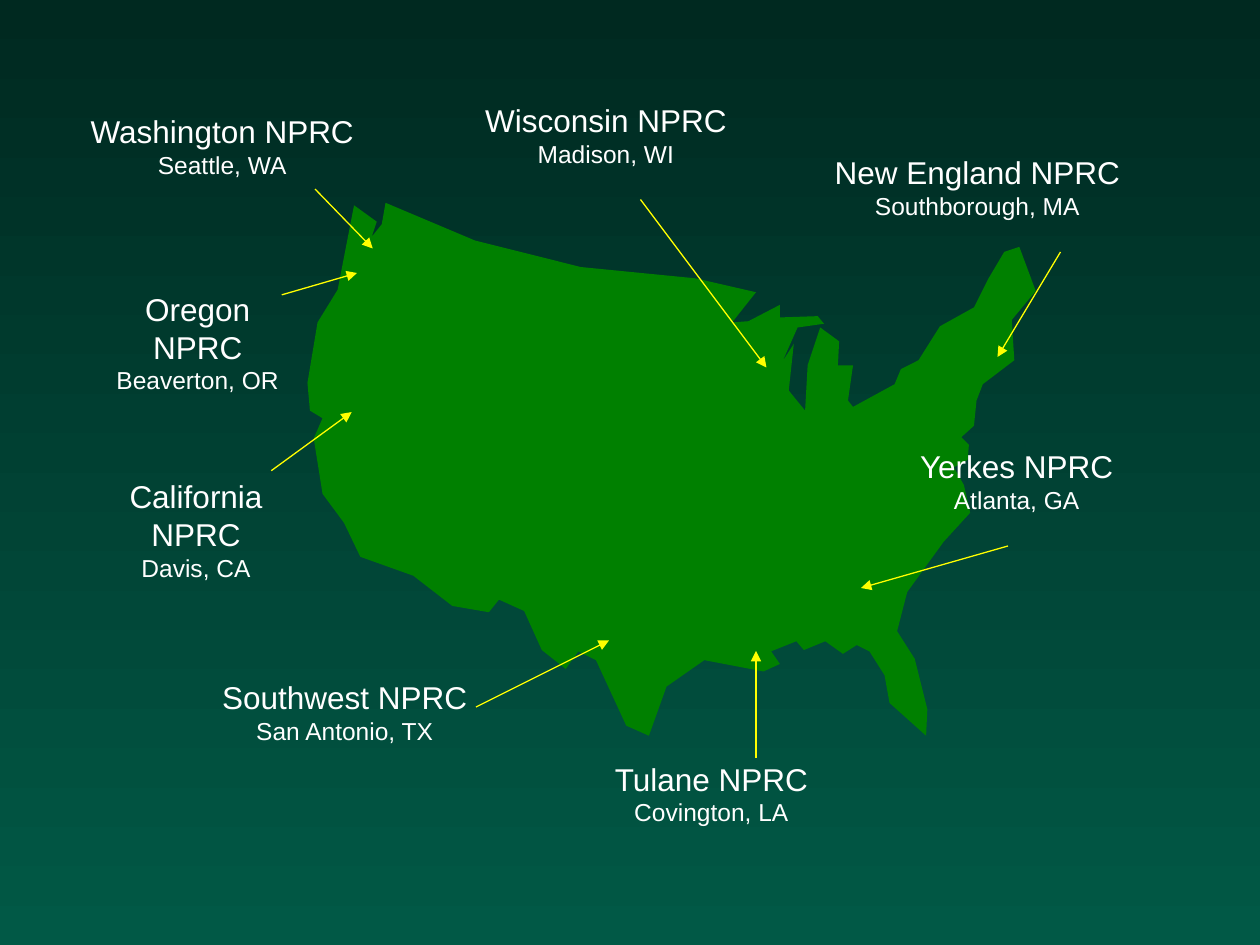
from dataclasses import dataclass

from pptx import Presentation
from pptx.dml.color import RGBColor
from pptx.enum.shapes import MSO_CONNECTOR
from pptx.enum.text import MSO_ANCHOR, MSO_AUTO_SIZE, PP_ALIGN
from pptx.oxml import parse_xml
from pptx.oxml.ns import nsdecls, qn
from pptx.util import Pt

STRAIGHT = MSO_CONNECTOR.STRAIGHT
CENTER = PP_ALIGN.CENTER
TOP = MSO_ANCHOR.TOP
GROW = MSO_AUTO_SIZE.SHAPE_TO_FIT_TEXT


@dataclass(frozen=True)
class Theme:
    font: str = "Arial"
    name_size: float = 18
    place_size: float = 14
    arrow_width: float = 0.75
    text: RGBColor = RGBColor.from_string("FFFFFF")
    arrow: RGBColor = RGBColor.from_string("FFFF00")
    land: RGBColor = RGBColor.from_string("008000")
    background_top: RGBColor = RGBColor.from_string("002920")
    background_bottom: RGBColor = RGBColor.from_string("015946")


THEME = Theme()
LABEL_HEIGHT = 60

# Name, place, label (left, top, width), arrow start, arrow end, in points
CENTERS = [
    ("Oregon NPRC", "Beaverton, OR", (48, 162, 130), (161, 168.5), (204, 156)),
    ("California NPRC", "Davis, CA", (39, 269, 146), (155, 269), (201, 235.5)),
    ("Southwest NPRC", "San Antonio, TX", (119.5, 384, 155), (272, 404), (348, 366)),
    ("Washington NPRC", "Seattle, WA", (42, 60.5, 170), (180, 108), (213, 142)),
    ("Tulane NPRC", "Covington, LA", (344, 430.5, 125), (432, 433), (432, 372)),
    ("Yerkes NPRC", "Atlanta, GA", (517.5, 252, 127), (576, 312), (492, 336)),
    ("New England NPRC", "Southborough, MA", (469.5, 84, 178), (606, 144), (570, 204)),
    ("Wisconsin NPRC", "Madison, WI", (270, 54, 152.5), (366, 114), (438, 210)),
]

MAP_UNIT = Pt(0.72)
# Outline of the country, clockwise from the north-west, in map units
COUNTRY = [
    (306, 161), (377, 191), (461, 212), (552, 221), (600, 232), (581, 256),
    (594, 255), (619, 242), (619, 252), (649, 251), (654, 257), (633, 260),
    (621, 287), (630, 273), (626, 310), (639, 326), (641, 290), (651, 260),
    (666, 271), (665, 290), (677, 290), (673, 318), (677, 323), (710, 305),
    (715, 293), (729, 286), (746, 259), (773, 244), (784, 222), (797, 200),
    (809, 196), (822, 231), (803, 254), (805, 286), (780, 305), (775, 318),
    (773, 338), (763, 347), (769, 353), (768, 365), (757, 371), (765, 385),
    (770, 407), (749, 430), (720, 470), (712, 501), (726, 523), (736, 563),
    (735, 584), (706, 558), (702, 536), (690, 517), (680, 512), (669, 519),
    (655, 509), (638, 516), (632, 509), (612, 517), (619, 527), (606, 533),
    (559, 524), (529, 545), (515, 584), (497, 576), (473, 524), (459, 517),
    (449, 531), (430, 516), (416, 485), (396, 476), (388, 486), (359, 481),
    (328, 457), (286, 442), (273, 415), (256, 392), (249, 348), (256, 332),
    (246, 326), (244, 304), (252, 256), (268, 230), (281, 163), (299, 176),
    (295, 188), (303, 178),
]


def set_background(slide):
    fill = slide.background.fill
    fill.gradient()
    fill.gradient_angle = 270
    colors = (THEME.background_top, THEME.background_bottom)
    for stop, color in zip(fill.gradient_stops, colors):
        stop.color.rgb = color


def add_country(slide):
    builder = slide.shapes.build_freeform(*COUNTRY[0], scale=MAP_UNIT)
    builder.add_line_segments(COUNTRY[1:], close=True)
    shape = builder.convert_to_shape()
    shape.fill.solid()
    shape.fill.fore_color.rgb = THEME.land
    shape.line.fill.background()
    shape.shadow.inherit = False


def write(paragraph, text, *, size, color=THEME.text, align=CENTER):
    paragraph.alignment = align
    run = paragraph.add_run()
    run.text = text
    run.font.name = THEME.font
    run.font.size = Pt(size)
    run.font.color.rgb = color


def add_label(slide, name, place, box):
    frame = slide.shapes.add_textbox(*map(Pt, box), Pt(LABEL_HEIGHT)).text_frame
    frame.word_wrap = False
    frame.auto_size = GROW
    frame.vertical_anchor = TOP
    write(frame.paragraphs[0], name, size=THEME.name_size)
    write(frame.add_paragraph(), place, size=THEME.place_size)


def add_arrow(slide, start, end):
    connector = slide.shapes.add_connector(STRAIGHT, *map(Pt, start + end))
    connector.line.color.rgb = THEME.arrow
    connector.line.width = Pt(THEME.arrow_width)
    properties = connector._element.spPr
    properties.find(qn("a:ln")).append(
        parse_xml(f'<a:tailEnd {nsdecls("a")} type="triangle"/>'))
    properties.append(parse_xml(f'<a:effectLst {nsdecls("a")}/>'))


def main():
    presentation = Presentation()
    presentation.slide_width, presentation.slide_height = Pt(720), Pt(540)
    slide = presentation.slides.add_slide(presentation.slide_layouts[6])
    set_background(slide)
    add_country(slide)
    for name, place, box, start, end in CENTERS:
        add_label(slide, name, place, box)
        add_arrow(slide, start, end)
    presentation.save("out.pptx")


if __name__ == "__main__":
    main()
